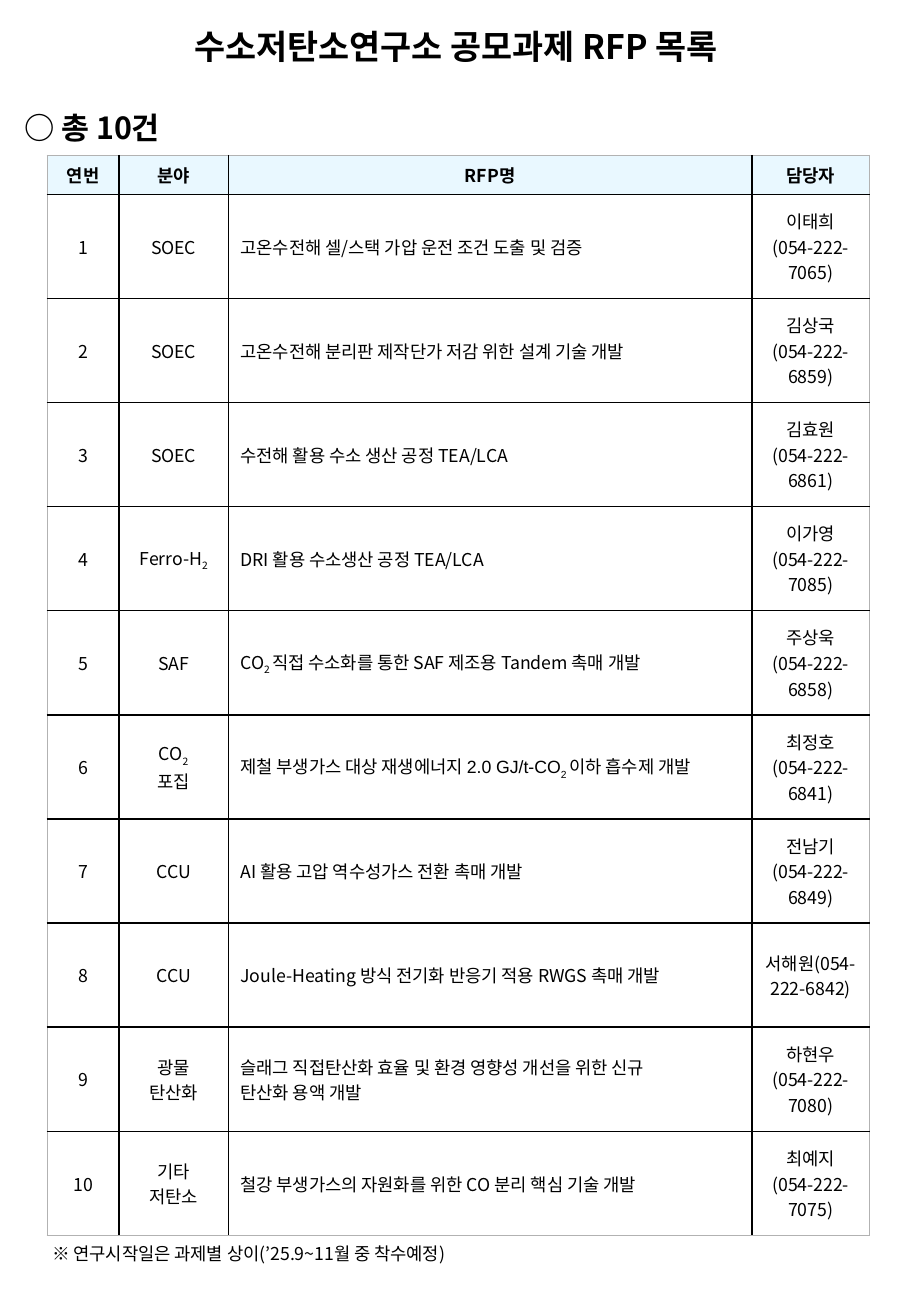
from lxml.etree import SubElement
from pptx import Presentation
from pptx.dml.color import RGBColor
from pptx.enum.text import MSO_ANCHOR, MSO_AUTO_SIZE, PP_ALIGN
from pptx.oxml.ns import qn
from pptx.util import Inches, Pt

# Content: "~" encloses a subscript, "\n" starts a paragraph, "\v" breaks a line
TITLE = "수소저탄소연구소 공모과제 RFP 목록"
COUNT = "○ 총 10건"
FOOTNOTE = "※ 연구시작일은 과제별 상이(’25.9~11월 중 착수예정)"
HEADER = ("연번", "분야", "RFP명", "담당자")
PROJECTS = [
    ("SOEC", "고온수전해 셀/스택 가압 운전 조건 도출 및 검증", "이태희\n(054-222-7065)"),
    ("SOEC", "고온수전해 분리판 제작단가 저감 위한 설계 기술 개발", "김상국\v(054-222-6859)"),
    ("SOEC", "수전해 활용 수소 생산 공정 TEA/LCA", "김효원\v(054-222-6861)"),
    ("Ferro-H~2~", "DRI 활용 수소생산 공정 TEA/LCA", "이가영\n(054-222-7085)"),
    ("SAF", "CO~2 ~직접 수소화를 통한 SAF 제조용 Tandem 촉매 개발", "주상욱\n(054-222-6858)"),
    ("CO~2~\n포집", "제철 부생가스 대상 재생에너지 2.0 GJ/t-CO~2 ~이하 흡수제 개발",
     "최정호\n(054-222-6841)"),
    ("CCU", "AI 활용 고압 역수성가스 전환 촉매 개발", "전남기\n(054-222-6849)"),
    ("CCU", "Joule-Heating 방식 전기화 반응기 적용 RWGS 촉매 개발", "서해원(054-222-6842)"),
    ("광물\n탄산화", "슬래그 직접탄산화 효율 및 환경 영향성 개선을 위한 신규 \v탄산화 용액 개발",
     "하현우\n(054-222-7080)"),
    ("기타\n저탄소", "철강 부생가스의 자원화를 위한 CO 분리 핵심 기술 개발", "최예지\n(054-222-7075)"),
]
ARIAL_ROWS = (6, 9)
NAME_COLUMN = 2

# Look and layout, in inches
COLORS = {"text": "000000", "header": "E9F8FF", "grid": "000000", "edge": "B2B2B2"}
FONT, LATIN_FONT = "Noto Sans CJK KR", "Arial"
BODY_SIZE = 10.5
PAGE_WIDTH, PAGE_HEIGHT = 7.5, 10.83
TABLE_LEFT, TABLE_TOP, TABLE_HEIGHT = 0.39, 1.28, 8.89
COLUMN_WIDTHS = (0.59, 0.9, 4.31, 0.97)
HEADER_HEIGHT = 0.32
ROW_HEIGHT = (TABLE_HEIGHT - HEADER_HEIGHT) / len(PROJECTS)


def style(font, size, bold=False, name=FONT):
    font.size, font.bold, font.name = Pt(size), bold, name
    font.color.rgb = RGBColor.from_string(COLORS["text"])
    SubElement(font._element, qn("a:ea")).set("typeface", FONT)


def write(frame, text, size, bold=False, align=PP_ALIGN.LEFT, name=FONT):
    for number, line in enumerate(text.split("\n")):
        para = frame.add_paragraph() if number else frame.paragraphs[0]
        para.alignment = align
        style(para.font, size, bold, name)
        for part, piece in enumerate(line.split("~")):
            for broken, words in enumerate(piece.split("\v")):
                if broken:
                    para.add_line_break()
                if words:
                    span = para.add_run()
                    span.text = words
                    if part % 2:
                        span.font._element.set("baseline", "-25000")


def write_box(box, text, size, bold=False, align=PP_ALIGN.LEFT, wrap=True):
    frame = box.text_frame
    frame.word_wrap, frame.auto_size = wrap, MSO_AUTO_SIZE.NONE
    frame.vertical_anchor = MSO_ANCHOR.MIDDLE
    # The only tilde in the boxes is a literal one
    para = frame.paragraphs[0]
    para.alignment = align
    style(para.font, size, bold)
    para.add_run().text = text


def draw_borders(cell, edges):
    for side, is_edge in edges.items():
        line = SubElement(cell._tc.get_or_add_tcPr(), qn(f"a:{side}"), w=str(Pt(1)))
        fill = SubElement(line, qn("a:solidFill"))
        SubElement(fill, qn("a:srgbClr"), val=COLORS["edge" if is_edge else "grid"])


def build_table(page):
    rows = [HEADER] + [(str(n), *project) for n, project in enumerate(PROJECTS, 1)]
    last_row, last_column = len(rows) - 1, len(HEADER) - 1
    table = page.shapes.add_table(
        len(rows), len(HEADER), Inches(TABLE_LEFT), Inches(TABLE_TOP),
        Inches(sum(COLUMN_WIDTHS)), Inches(TABLE_HEIGHT)).table
    table.horz_banding = False
    for column, width in zip(table.columns, COLUMN_WIDTHS):
        column.width = Inches(width)
    for r, texts in enumerate(rows):
        table.rows[r].height = Inches(ROW_HEIGHT if r else HEADER_HEIGHT)
        for c, text in enumerate(texts):
            cell = table.cell(r, c)
            cell.vertical_anchor = MSO_ANCHOR.MIDDLE
            draw_borders(cell, {"lnL": c == 0, "lnR": c == last_column,
                                "lnT": r == 0, "lnB": r == last_row})
            if r == 0:
                cell.fill.solid()
                cell.fill.fore_color.rgb = RGBColor.from_string(COLORS["header"])
            else:
                cell.fill.background()
            is_name = r > 0 and c == NAME_COLUMN
            write(cell.text_frame, text, BODY_SIZE, r == 0,
                  PP_ALIGN.LEFT if is_name else PP_ALIGN.CENTER,
                  LATIN_FONT if is_name and r in ARIAL_ROWS else FONT)


def main():
    deck = Presentation()
    deck.slide_width, deck.slide_height = Inches(PAGE_WIDTH), Inches(PAGE_HEIGHT)
    page = deck.slides.add_slide(deck.slide_layouts[5])

    # Title
    title = page.shapes.title
    title.left, title.top = Inches(1.29), Inches(0.16)
    title.width, title.height = Inches(4.93), Inches(0.44)
    write_box(title, TITLE, 20, True, PP_ALIGN.CENTER, wrap=False)

    # Project table
    build_table(page)

    # Count above the table and footnote below it
    for text, size, bold, place in (
            (COUNT, 18, True, (0.1, 0.85, 6.58, 0.4)),
            (FOOTNOTE, BODY_SIZE, False, (0.33, TABLE_TOP + TABLE_HEIGHT, 6.98, 0.29))):
        write_box(page.shapes.add_textbox(*map(Inches, place)), text, size, bold)

    deck.save("out.pptx")


if __name__ == "__main__":
    main()
